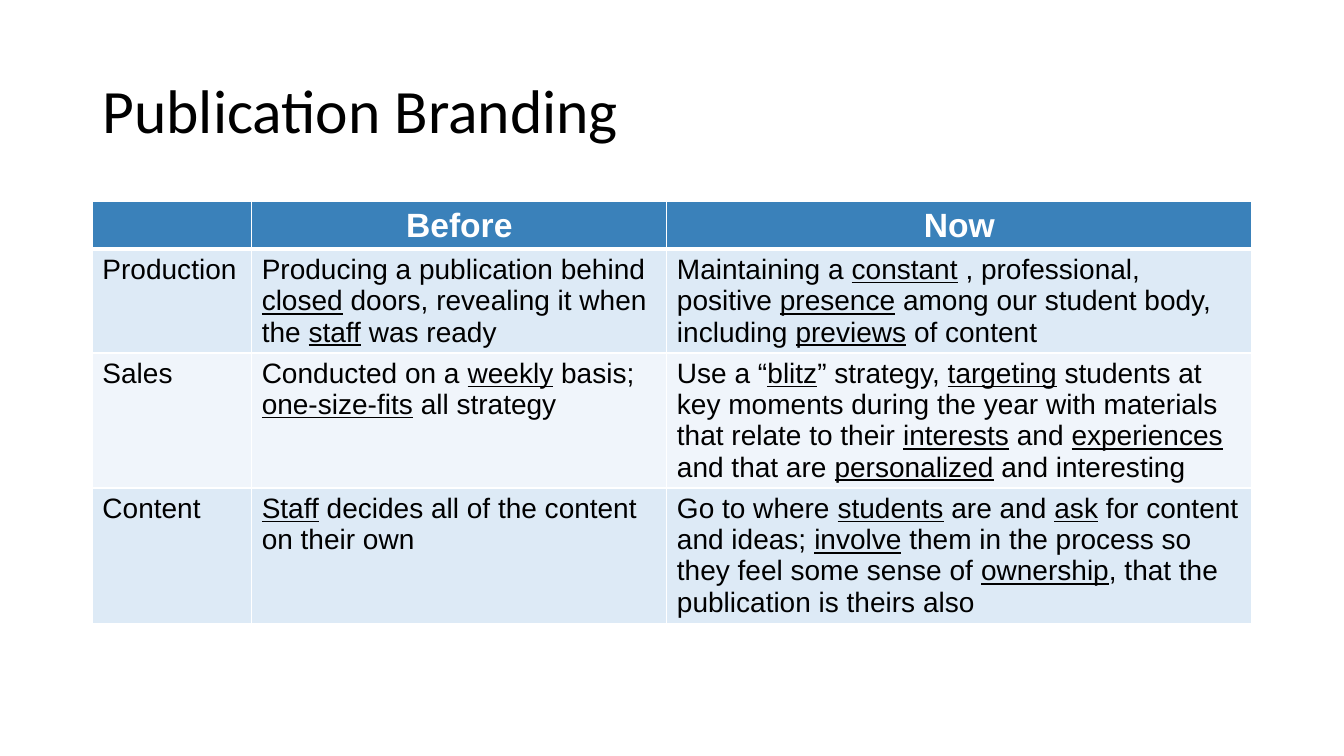
from dataclasses import dataclass

from lxml.etree import SubElement
from pptx import Presentation
from pptx.dml.color import RGBColor as Color
from pptx.enum.text import MSO_ANCHOR as Anchor, MSO_AUTO_SIZE as AutoSize, PP_ALIGN as Align
from pptx.oxml.ns import qn
from pptx.util import Pt


@dataclass(frozen=True)
class Theme:
    ink: str = "000000"
    paper: str = "FFFFFF"
    header: str = "3A81BA"
    bands: tuple = ("DDEAF6", "F0F5FB")
    title_font: str = "Calibri"
    table_font: str = "Arial"
    title_size: int = 44
    header_size: int = 24
    body_size: int = 20
    thin: int = 1
    thick: int = 3


def write(frame, text, *, font, size, color, bold=False, align=Align.LEFT, spacing=None):
    para = frame.paragraphs[0]
    para.alignment = align
    para.line_spacing = spacing
    for index, piece in enumerate(text.split("_")):
        if piece:
            span = para.add_run()
            span.text = piece
            span.font.name = font
            span.font.size = Pt(size)
            span.font.bold = bold
            span.font.underline = index % 2 == 1
            span.font.color.rgb = Color.from_string(color)


def set_borders(cell, color, widths):
    properties = cell._tc.get_or_add_tcPr()
    for index, (side, width) in enumerate(widths.items()):
        line = SubElement(properties, qn(f"a:ln{side}"), w=str(Pt(width)))
        fill = SubElement(line, qn("a:solidFill"))
        SubElement(fill, qn("a:srgbClr"), val=color)
        properties.insert(index, line)


class SlideBuilder:
    def __init__(self, page, theme):
        self.page = page
        self.theme = theme

    def title(self, text, left, top, width, height):
        theme = self.theme
        box = self.page.shapes.title
        box.left, box.top, box.width, box.height = map(Pt, (left, top, width, height))
        frame = box.text_frame
        frame.auto_size = AutoSize.NONE
        frame.vertical_anchor = Anchor.MIDDLE
        write(frame, text, font=theme.title_font, size=theme.title_size,
              color=theme.ink, spacing=0.9)

    def table(self, rows, left, top, widths, row_height):
        shape = self.page.shapes.add_table(
            len(rows), len(widths), Pt(left), Pt(top),
            Pt(sum(widths)), Pt(row_height * len(rows)))
        table = shape.table
        for column, width in zip(table.columns, widths):
            column.width = Pt(width)
        for row_index, texts in enumerate(rows):
            table.rows[row_index].height = Pt(row_height)
            for column_index, text in enumerate(texts):
                self.cell(table.cell(row_index, column_index), text, row_index)

    def cell(self, cell, text, row_index):
        theme = self.theme
        is_header = row_index == 0
        shade = theme.header if is_header else theme.bands[(row_index - 1) % 2]
        cell.fill.solid()
        cell.fill.fore_color.rgb = Color.from_string(shade)
        set_borders(cell, theme.paper, {
            "L": theme.thin,
            "R": theme.thin,
            "T": theme.thick if row_index == 1 else theme.thin,
            "B": theme.thick if is_header else theme.thin,
        })
        write(cell.text_frame, text, font=theme.table_font,
              size=theme.header_size if is_header else theme.body_size,
              color=theme.paper if is_header else theme.ink,
              bold=is_header, align=Align.CENTER if is_header else Align.LEFT)


BRANDING_ROWS = [
    ("", "Before", "Now"),
    ("Production",
     "Producing a publication behind _closed_ doors, revealing it when the _staff_ was ready",
     "Maintaining a _constant_ , professional, positive _presence_ among our student body, "
     "including _previews_ of content"),
    ("Sales",
     "Conducted on a _weekly_ basis; _one-size-fits_ all strategy",
     "Use a “_blitz_” strategy, _targeting_ students at key moments during the year with "
     "materials that relate to their _interests_ and _experiences_ and that are "
     "_personalized_ and interesting"),
    ("Content",
     "_Staff_ decides all of the content on their own",
     "Go to where _students_ are and _ask_ for content and ideas; _involve_ them in the "
     "process so they feel some sense of _ownership_, that the publication is theirs also"),
]


def main():
    deck = Presentation()
    deck.slide_width, deck.slide_height = Pt(960), Pt(540)
    page = deck.slides.add_slide(deck.slide_layouts[5])
    builder = SlideBuilder(page, Theme())
    builder.title("Publication Branding", 66, 28.75, 828, 104.4)
    builder.table(BRANDING_ROWS, 66, 144, (113.8, 296.6, 417.6), 29.2)
    deck.save("out.pptx")


if __name__ == "__main__":
    main()
